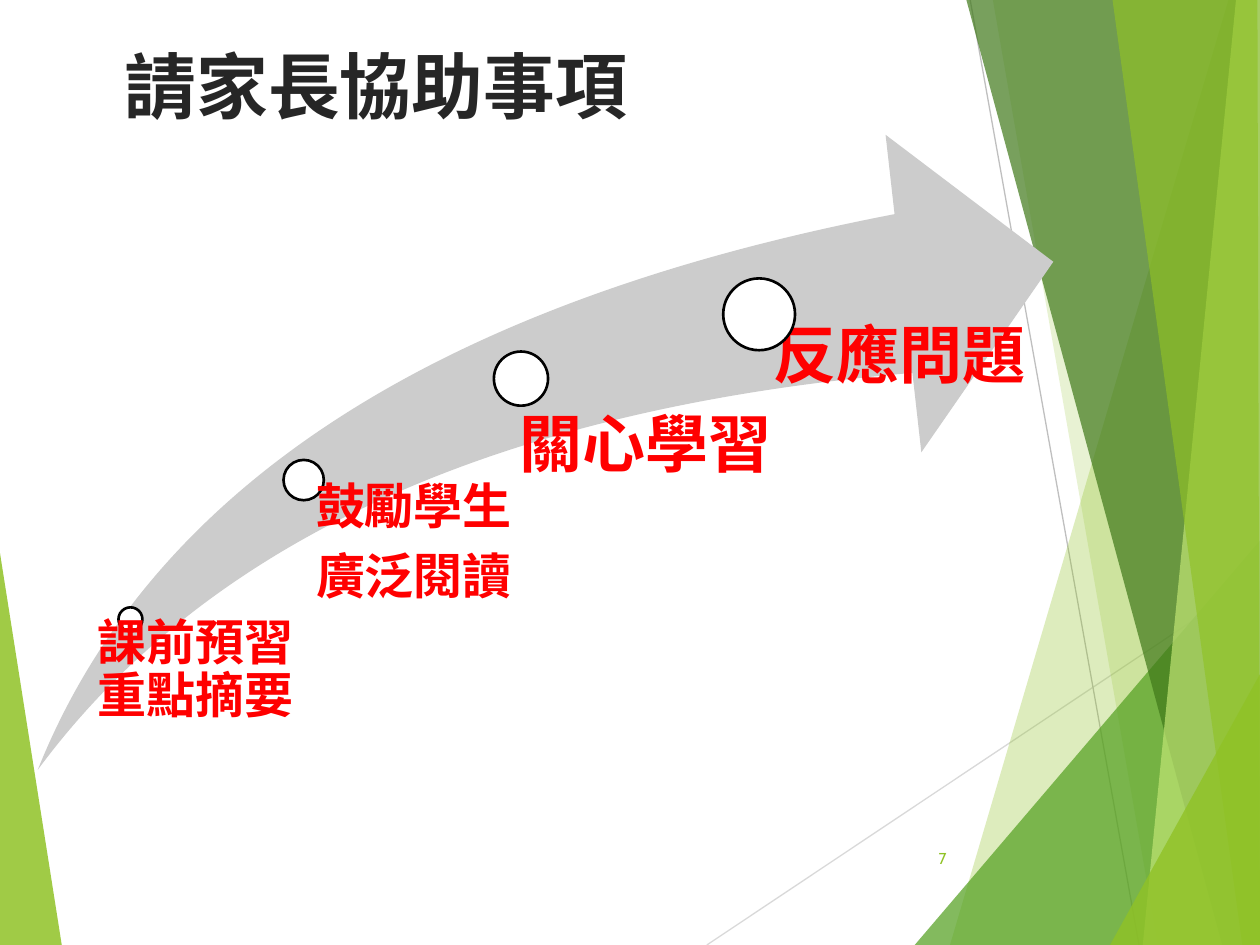
from lxml import etree
from pptx import Presentation, util as u
from pptx.dml.color import RGBColor
from pptx.enum import shapes, text
from pptx.oxml.ns import qn

LIME = RGBColor(0x90, 0xC2, 0x26)
GREEN = RGBColor(0x54, 0xA0, 0x21)
FOREST = RGBColor(0x3F, 0x78, 0x19)
PALE = RGBColor(0xC0, 0xE4, 0x74)
SILVER = RGBColor(0xD9, 0xD9, 0xD9)
GREY = RGBColor(0xBF, 0xBF, 0xBF)
ARROW = RGBColor(0xCC, 0xCC, 0xCC)
INK = RGBColor(0x26, 0x26, 0x26)
RED = RGBColor(0xFF, 0, 0)
WHITE = RGBColor(0xFF, 0xFF, 0xFF)
BLACK = RGBColor(0, 0, 0)

COLUMNS, ROWS = 100, 75


class Deck:
    heading_font, body_font = "Quicksand", "Cabin"

    def __init__(self):
        self.presentation = Presentation()
        self.presentation.slide_width = u.Inches(10)
        self.presentation.slide_height = u.Inches(7.5)
        self.slide = self.presentation.slides.add_slide(
            self.presentation.slide_layouts[5])
        self.shapes = self.slide.shapes

    def point(self, column, row):
        return (round(self.presentation.slide_width * column / COLUMNS),
                round(self.presentation.slide_height * row / ROWS))

    def box(self, left, top, width, height):
        return self.point(left, top) + self.point(width, height)

    def paint(self, shape, color, opacity=100, outline=None):
        shape.shadow.inherit = False
        shape.fill.solid()
        shape.fill.fore_color.rgb = color
        if opacity < 100:
            fill_color = shape._element.spPr.find(qn("a:solidFill"))[0]
            etree.SubElement(fill_color, qn("a:alpha"), val=str(opacity * 1000))
        if outline is None:
            shape.line.fill.background()
        else:
            shape.line.color.rgb = outline
            shape.line.width = u.Pt(1.5)

    def facet(self, corners, color, opacity):
        first, *rest = [self.point(*corner) for corner in corners]
        builder = self.shapes.build_freeform(*first)
        builder.add_line_segments(rest, close=True)
        self.paint(builder.convert_to_shape(), color, opacity)

    def line(self, start, end, color):
        connector = self.shapes.add_connector(
            shapes.MSO_CONNECTOR.STRAIGHT, *self.point(*start), *self.point(*end))
        connector.line.color.rgb = color
        connector.line.width = u.Pt(0.75)
        etree.SubElement(connector._element.spPr, qn("a:effectLst"))

    def preset(self, kind, area, color, outline=None):
        shape = self.shapes.add_shape(kind, *self.box(*area))
        self.paint(shape, color, outline=outline)
        return shape

    def set_text(self, shape, lines, size, color, font, bold=True,
                 align=text.PP_ALIGN.CENTER, anchor=text.MSO_ANCHOR.TOP,
                 spacing=0.9, after=0):
        frame = shape.text_frame
        frame.word_wrap = True
        frame.auto_size = text.MSO_AUTO_SIZE.NONE
        frame.vertical_anchor = anchor
        for number, words in enumerate(lines):
            paragraph = frame.add_paragraph() if number else frame.paragraphs[0]
            paragraph.alignment = align
            paragraph.line_spacing = spacing
            paragraph.space_before = u.Pt(0)
            paragraph.space_after = u.Pt(after)
            run = paragraph.add_run()
            run.text = words
            run.font.name, run.font.size, run.font.bold = font, u.Pt(size), bold
            run.font.color.rgb = color
            run._r.get_or_add_rPr().set("lang", "zh-TW")

    def title(self, words, area):
        title = self.shapes.title
        title.left, title.top, title.width, title.height = self.box(*area)
        self.set_text(title, [words], 41, INK, self.heading_font)

    def number(self, words, area):
        box = self.shapes.add_textbox(*self.box(*area))
        self.set_text(box, [words], 9, LIME, self.body_font, bold=False, spacing=1,
                      align=text.PP_ALIGN.RIGHT, anchor=text.MSO_ANCHOR.MIDDLE)

    def label(self, lines, area, inset, size):
        box = self.shapes.add_textbox(*self.box(*area))
        frame = box.text_frame
        frame.margin_left = u.Inches(inset)
        frame.margin_top = frame.margin_right = frame.margin_bottom = 0
        self.set_text(box, lines, size, RED, self.heading_font, after=size * 0.35)

    def dot(self, left, top, size):
        self.preset(shapes.MSO_SHAPE.OVAL, (left, top, size, size), WHITE, BLACK)


def main():
    deck = Deck()

    # Green facets and thin lines of the backdrop
    deck.facet([(0, 43.9), (4.9, 75), (0, 75)], LIME, 85)
    deck.line((56.1, 75), (100, 45.7), SILVER)
    deck.line((77, 0), (90.4, 75), GREY)
    for corners, color, opacity in (
        ([(97.5, 0), (75.4, 75), (100, 75), (100, 0)], LIME, 30),
        ([(78.8, 0), (91.9, 75), (100, 75), (100, 0)], LIME, 20),
        ([(72.6, 75), (100, 42.9), (100, 75)], GREEN, 72),
        ([(76.7, 0), (97, 75), (100, 75), (100, 0)], FOREST, 70),
        ([(98.1, 0), (90.7, 75), (100, 75), (100, 0)], PALE, 70),
        ([(88.3, 0), (98.6, 75), (100, 75), (99.8, 0)], LIME, 65),
        ([(88.1, 75), (100, 53.5), (100, 75)], LIME, 80),
    ):
        deck.facet(corners, color, opacity)

    # Slide number and title
    deck.number("7", (70.5, 66.1, 5.6, 4))
    deck.title("請家長協助事項", (-3.5, 3.6, 66.7, 7.3))

    # Rising arrow
    arrow = deck.preset(shapes.MSO_SHAPE.SWOOSH_ARROW, (3, 10.7, 80.6, 50.4), ARROW)
    arrow.adjustments[0] = arrow.adjustments[1] = 0.25

    # Steps along the arrow; each dot lies over the labels before it
    for dot, lines, area, inset, size in (
        ((9.4, 48.2, 1.9), ["課前預習重點摘要"], (6.6, 49.1, 16.9, 12), 0.1, 28),
        ((22.5, 36.5, 3.2), ["反應問題"], (58.1, 25.7, 24.8, 5.7), 0.17, 36),
        ((39.2, 27.9, 4.3), ["鼓勵學生", "廣泛閱讀"], (20, 38.3, 23.4, 14.5), 0.23, 28),
        ((57.4, 22.1, 5.7), ["關心學習"], (36.3, 32.8, 26.9, 9.6), 0.3, 36),
    ):
        deck.dot(*dot)
        deck.label(lines, area, inset, size)

    deck.presentation.save("out.pptx")


if __name__ == "__main__":
    main()
